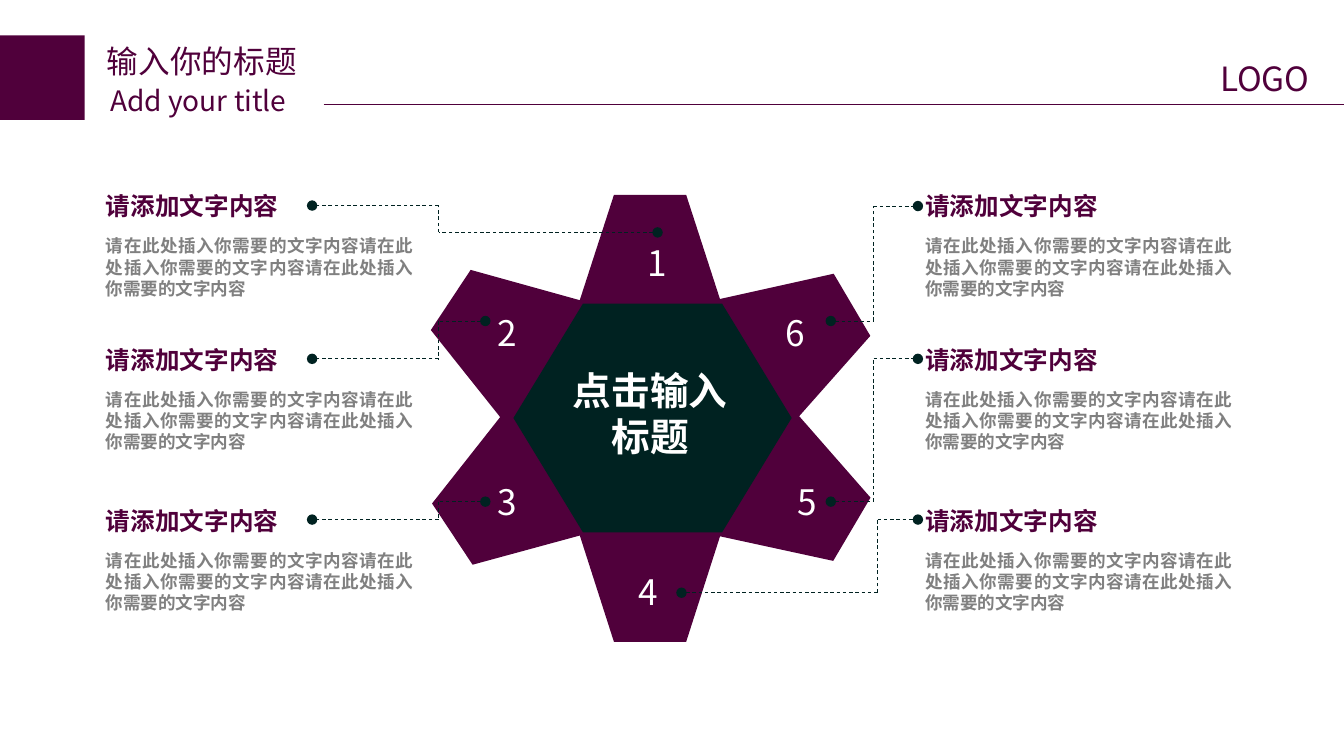
from dataclasses import dataclass

from lxml.etree import SubElement
from pptx import Presentation
from pptx.dml.color import RGBColor
from pptx.enum.dml import MSO_LINE
from pptx.enum.shapes import MSO_CONNECTOR, MSO_SHAPE
from pptx.enum.text import PP_ALIGN
from pptx.oxml.ns import qn
from pptx.util import Cm, Pt


@dataclass(frozen=True)
class Theme:
    plum: RGBColor = RGBColor(0x50, 0x00, 0x3B)
    dark: RGBColor = RGBColor(0x00, 0x22, 0x21)
    gray: RGBColor = RGBColor(0x80, 0x80, 0x80)
    white: RGBColor = RGBColor(0xFF, 0xFF, 0xFF)
    cjk: str = "Noto Sans CJK SC"
    latin: str = "Arial"
    title: int = 18
    subtitle: int = 16
    logo: int = 19
    number: int = 20
    heading: int = 14
    body: int = 10
    center: int = 22


theme = Theme()
presentation = Presentation()
presentation.slide_width, presentation.slide_height = Cm(27), Cm(15.01)
slide = presentation.slides.add_slide(presentation.slide_layouts[6])


def add_text(text, left, top, width, height, size, color, font=theme.cjk,
             bold=False, align=PP_ALIGN.LEFT, inset=0, wrap=True):
    box = slide.shapes.add_textbox(Cm(left), Cm(top), Cm(width), Cm(height))
    frame = box.text_frame
    frame.word_wrap = wrap
    frame.margin_left = frame.margin_right = Cm(inset)
    frame.margin_top = frame.margin_bottom = Cm(inset / 2)
    paragraph = frame.paragraphs[0]
    paragraph.text = text
    paragraph.alignment = align
    paragraph.font.size = Pt(size)
    paragraph.font.bold = bold
    paragraph.font.name = font
    paragraph.font.color.rgb = color
    properties = paragraph._p.pPr.find(qn("a:defRPr"))
    SubElement(properties, qn("a:ea"), typeface=theme.cjk)


def add_line(start, end, color, width, dashed=False, dot=None):
    line = slide.shapes.add_connector(
        MSO_CONNECTOR.STRAIGHT, Cm(start[0]), Cm(start[1]), Cm(end[0]), Cm(end[1]))
    line.line.color.rgb = color
    line.line.width = Pt(width)
    if dashed:
        line.line.dash_style = MSO_LINE.DASH
    if dot:
        SubElement(line.line._get_or_add_ln(), qn(dot), type="oval")
    SubElement(line._element.spPr, qn("a:effectLst"))


# Header
square = slide.shapes.add_shape(MSO_SHAPE.RECTANGLE, 0, Cm(0.71), Cm(1.7), Cm(1.7))
square.shadow.inherit = False
square.fill.solid()
square.fill.fore_color.rgb = theme.plum
square.line.fill.background()
add_text("输入你的标题", 1.9, 0.71, 4.4, 1.02, theme.title, theme.plum, inset=0.25)
add_text("Add your title", 1.97, 1.55, 4.4, 0.94, theme.subtitle, theme.plum, inset=0.25)
add_line((6.5, 2.1), (27, 2.1), theme.plum, 0.75)
add_text("LOGO", 24.26, 1.04, 2.44, 1.07, theme.logo, theme.plum, inset=0.25, wrap=False)

# Petals and central hexagon: center x, center y, width, height, rotation, adjustment, color
hexagons = [
    (13.06, 6.15, 2.9, 4.47, 0, 0.25, theme.plum),
    (15.19, 7.26, 2.9, 4.47, 59.5, 0.25, theme.plum),
    (10.92, 7.26, 2.9, 4.47, 303.5, 0.25, theme.plum),
    (13.06, 10.64, 2.9, 4.52, 0, 0.25, theme.plum),
    (15.19, 9.5, 2.95, 4.47, 300.5, 0.25, theme.plum),
    (10.95, 9.5, 2.95, 4.47, 56.5, 0.25, theme.plum),
    (13.11, 8.4, 5.59, 4.6, 0, 0.304, theme.dark),
]
for x, y, width, height, rotation, adjustment, color in hexagons:
    hexagon = slide.shapes.add_shape(
        MSO_SHAPE.HEXAGON, Cm(x - width / 2), Cm(y - height / 2), Cm(width), Cm(height))
    hexagon.adjustments[0] = adjustment
    hexagon.rotation = rotation
    hexagon.shadow.inherit = False
    hexagon.fill.solid()
    hexagon.fill.fore_color.rgb = color
    hexagon.line.fill.background()
add_text("点击输入标题", 11.51, 7.37, 3.1, 1.85, theme.center, theme.white,
         bold=True, align=PP_ALIGN.CENTER)

# Petal numbers
number_places = [(12.7, 4.85), (9.7, 6.25), (9.7, 9.65),
                 (12.52, 11.46), (15.72, 9.65), (15.49, 6.25)]
for number, (left, top) in enumerate(number_places, 1):
    add_text(str(number), left, top, 0.99, 0.84, theme.number, theme.white,
             align=PP_ALIGN.CENTER)

# Descriptions on both sides
for left in (2.13, 18.59):
    for top in (3.84, 6.93, 10.16):
        add_text("请添加文字内容", left, top, 6.27, 0.58, theme.heading, theme.plum,
                 font=theme.latin, bold=True)
        add_text("请在此处插入你需要的文字内容" * 3, left, top + 0.89, 6.17, 1.27,
                 theme.body, theme.gray, font=theme.latin, bold=True,
                 align=PP_ALIGN.JUSTIFY)

# Dashed leaders: petal point, elbow x, description point
leaders = [
    ((13.21, 4.67), 8.81, (6.27, 4.13)),
    ((9.75, 6.45), 8.81, (6.27, 7.21)),
    ((9.75, 10.08), 8.81, (6.27, 10.44)),
    ((13.69, 11.91), 17.63, (18.44, 10.44)),
    ((16.69, 10.08), 17.55, (18.44, 7.21)),
    ((16.69, 6.45), 17.55, (18.44, 4.14)),
]
for petal, elbow, description in leaders:
    upper, lower = (elbow, petal[1]), (elbow, description[1])
    add_line(petal, upper, theme.dark, 0.5, dashed=True, dot="a:headEnd")
    add_line(upper, lower, theme.dark, 0.5, dashed=True)
    add_line(lower, description, theme.dark, 0.5, dashed=True, dot="a:tailEnd")

presentation.save("out.pptx")
